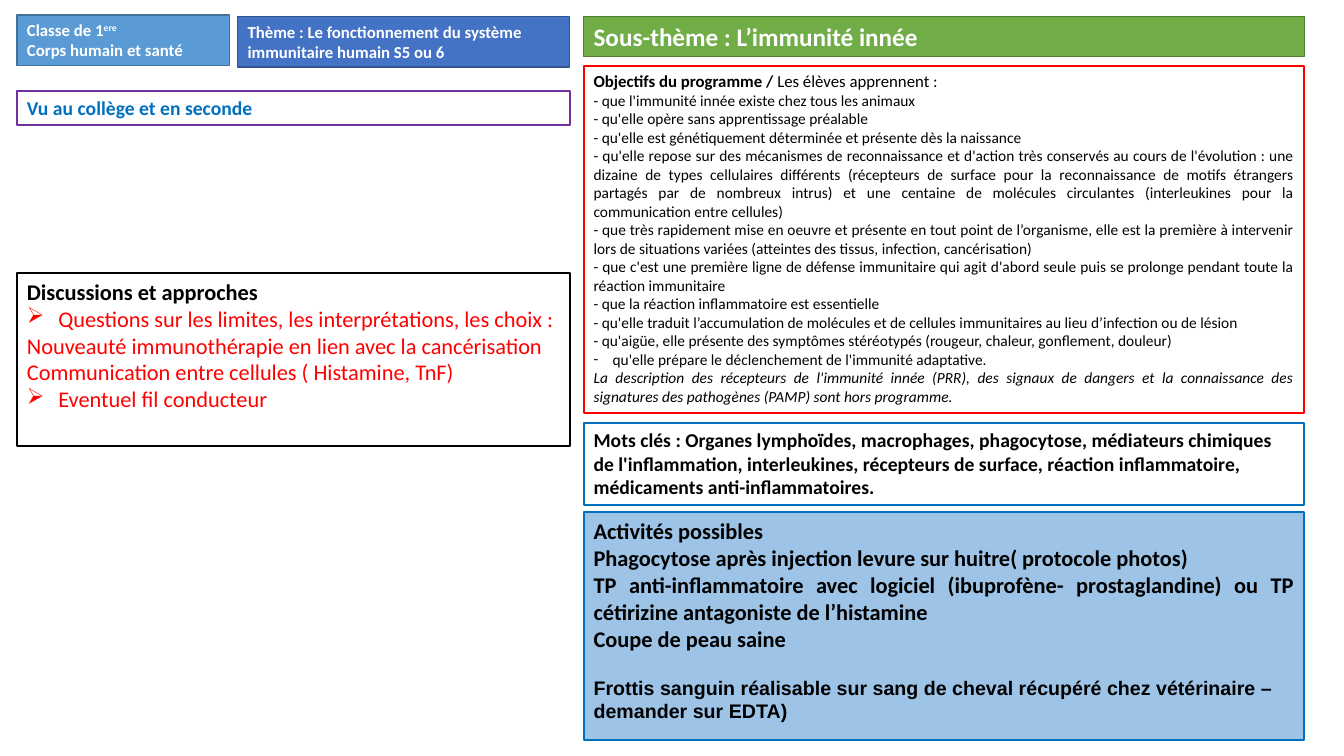
"""Build the lesson overview slide on innate immunity."""
from lxml import etree
from pptx import Presentation
from pptx import util as u
from pptx.dml.color import RGBColor
from pptx.enum import shapes, text
from pptx.oxml.ns import qn

COLOURS = {
    "white": "FFFFFF", "black": "000000", "red": "FF0000", "purple": "7030A0",
    "blue": "0070C0", "sky": "5B9BD5", "sky_edge": "42719B", "royal": "4472C4",
    "royal_edge": "31538F", "green": "70AD47", "green_edge": "517E33", "pale": "9DC3E6",
}
LEFT, LEFT_WIDTH = 0.43, 13.94
RIGHT, RIGHT_WIDTH = 14.71, 18.16
JUSTIFY = text.PP_ALIGN.JUSTIFY


def colour(name):
    return RGBColor.from_string(COLOURS[name])


def add_bullet(paragraph, character, typeface, charset, indent, name):
    properties = paragraph._p.get_or_add_pPr()
    properties.set("marL", str(u.Cm(indent)))
    properties.set("indent", str(-u.Cm(indent)))
    bullet_colour = etree.SubElement(properties, qn("a:buClr"))
    etree.SubElement(bullet_colour, qn("a:srgbClr"), val=COLOURS[name])
    etree.SubElement(properties, qn("a:buFont"), typeface=typeface, charset=charset)
    etree.SubElement(properties, qn("a:buChar"), char=character)


plain = {"bold": False}
small = {"size": 11, "bold": False}
red = {"bold": False, "colour": "red"}
justified = {"alignment": JUSTIFY}
arrow = {"alignment": JUSTIFY, "bullet": ("Ø", "Wingdings", "2", 0.79, "red")}
dash = {"alignment": JUSTIFY, "bullet": ("-", "Calibri", "0", 0.48, "black")}

objectives = [
    "- que l'immunité innée existe chez tous les animaux",
    "- qu'elle opère sans apprentissage préalable",
    "- qu'elle est génétiquement déterminée et présente dès la naissance",
    "- qu'elle repose sur des mécanismes de reconnaissance et d'action très conservés au cours "
    "de l'évolution : une dizaine de types cellulaires différents (récepteurs de surface pour la "
    "reconnaissance de motifs étrangers partagés par de nombreux intrus) et une centaine de "
    "molécules circulantes (interleukines pour la communication entre cellules)",
    "- que très rapidement mise en oeuvre et présente en tout point de l’organisme, elle est la "
    "première à intervenir lors de situations variées (atteintes des tissus, infection, cancérisation)",
    "- que c'est une première ligne de défense immunitaire qui agit d'abord seule puis se prolonge "
    "pendant toute la réaction immunitaire",
    "- que la réaction inflammatoire est essentielle",
    "- qu'elle traduit l’accumulation de molécules et de cellules immunitaires au lieu d’infection "
    "ou de lésion",
    "- qu'aigüe, elle présente des symptômes stéréotypés (rougeur, chaleur, gonflement, douleur)",
]
activities = [
    "Activités possibles",
    "Phagocytose après injection levure sur huitre( protocole photos)",
    "TP anti-inflammatoire avec logiciel (ibuprofène- prostaglandine) ou TP cétirizine antagoniste "
    "de l’histamine",
    "Coupe de peau saine",
]

boxes = [
    {"at": (LEFT, 0.38, 5.36, 1.27), "fill": "sky", "line": ("sky_edge", 1),
     "size": 12, "colour": "white", "paragraphs": [
         ([("Classe de 1", {}), ("ere", {"baseline": 30000})], {}),
         ([("Corps humain et santé", {})], {})]},
    {"at": (5.99, 0.42, 8.36, 1.27), "fill": "royal", "line": ("royal_edge", 1),
     "size": 12, "colour": "white", "paragraphs": [
         ([("Thème : Le fonctionnement du système immunitaire humain S5 ou 6", {})], {})]},
    {"at": (RIGHT, 1.66, RIGHT_WIDTH, 8.76), "line": ("red", 1.5),
     "size": 12, "colour": "black", "paragraphs": [
         ([("Objectifs du programme / ", {}), ("Les élèves apprennent :", plain)], {}),
         *[([(objective, small)], justified) for objective in objectives],
         ([("qu'elle prépare le déclenchement de l'immunité adaptative.", small)], dash),
         ([("La description des récepteurs de l'immunité innée (PRR), des signaux de dangers et la "
            "connaissance des signatures des pathogènes (PAMP) sont hors programme.",
            {**small, "italic": True})], justified)]},
    {"at": (LEFT, 2.3, LEFT_WIDTH, 0.86), "line": ("purple", 1.5),
     "size": 14, "colour": "blue", "paragraphs": [([("Vu au collège et en seconde", {})], {})]},
    {"at": (LEFT, 6.88, LEFT_WIDTH, 4.37), "line": ("black", 1.5),
     "size": 16, "colour": "black", "paragraphs": [
         ([("Discussions et approches", {})], {}),
         ([("Questions sur les limites, les interprétations, les choix :", red)], arrow),
         ([("Nouveauté immunothérapie en lien avec la cancérisation", red)], justified),
         ([("Communication entre cellules ( Histamine, TnF)", red)], justified),
         ([("Eventuel fil conducteur", red)], arrow)]},
    {"at": (RIGHT, 12.91, RIGHT_WIDTH, 5.74), "fill": "pale", "line": ("blue", 1.5),
     "size": 16, "colour": "black", "paragraphs": [
         *[([(activity, {})], justified) for activity in activities],
         ([("Frottis sanguin réalisable sur sang de cheval récupéré chez vétérinaire – demander "
            "sur EDTA)", {"size": 14, "name": "Arial"})], {"space_before": u.Pt(17)})]},
    {"at": (RIGHT, 10.66, RIGHT_WIDTH, 2.06), "line": ("blue", 1.5),
     "size": 14, "colour": "black", "paragraphs": [
         ([("Mots clés : Organes lymphoïdes, macrophages, phagocytose, médiateurs chimiques de "
            "l'inflammation, interleukines, récepteurs de surface, réaction inflammatoire, "
            "médicaments anti-inflammatoires.", {})], {})]},
    {"at": (RIGHT, 0.41, RIGHT_WIDTH, 1.02), "fill": "green", "line": ("green_edge", 1),
     "size": 18, "colour": "white", "paragraphs": [([("Sous-thème : L’immunité innée", {})], {})]},
]

presentation = Presentation()
presentation.slide_width, presentation.slide_height = u.Cm(33.87), u.Cm(19.05)
slide = presentation.slides.add_slide(presentation.slide_layouts[6])

for box in boxes:
    shape = slide.shapes.add_shape(shapes.MSO_SHAPE.RECTANGLE, *map(u.Cm, box["at"]))
    shape.shadow.inherit = False
    if "fill" in box:
        shape.fill.solid()
        shape.fill.fore_color.rgb = colour(box["fill"])
    else:
        shape.fill.background()
    line_colour, line_width = box["line"]
    shape.line.color.rgb = colour(line_colour)
    shape.line.width = u.Pt(line_width)
    frame = shape.text_frame
    frame.word_wrap = True
    frame.vertical_anchor = text.MSO_ANCHOR.TOP
    for index, (runs, layout) in enumerate(box["paragraphs"]):
        paragraph = frame.add_paragraph() if index else frame.paragraphs[0]
        paragraph.alignment = layout.get("alignment", text.PP_ALIGN.LEFT)
        if "space_before" in layout:
            paragraph.space_before = layout["space_before"]
        if "bullet" in layout:
            add_bullet(paragraph, *layout["bullet"])
        for wording, changes in runs:
            run = paragraph.add_run()
            run.text = wording
            style = {"name": "Calibri", "bold": True, "size": box["size"],
                     "colour": box["colour"], **changes}
            run.font.color.rgb = colour(style.pop("colour"))
            run.font.size = u.Pt(style.pop("size"))
            if "baseline" in style:
                run._r.get_or_add_rPr().set("baseline", str(style.pop("baseline")))
            for attribute, value in style.items():
                setattr(run.font, attribute, value)

presentation.save("out.pptx")
